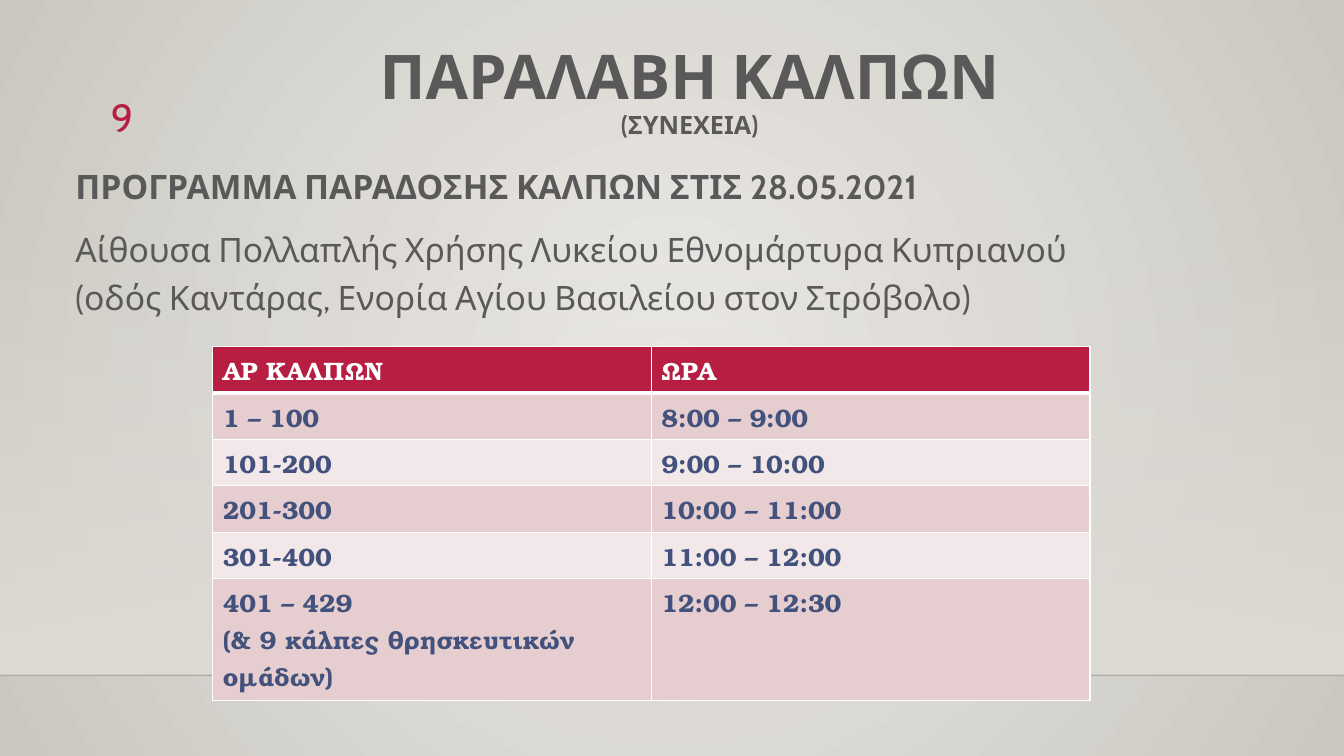
import pptx
import pptx.util
import pptx.dml.color
import pptx.enum.shapes
import pptx.enum.text
import pptx.oxml.ns
from lxml import etree

PX = 9144
RGB = pptx.dml.color.RGBColor
ALIGN = pptx.enum.text.PP_ALIGN
ANCHOR = pptx.enum.text.MSO_ANCHOR
GREY = RGB(0x59, 0x59, 0x59)
RED = RGB(0xB7, 0x1E, 0x42)
NAVY = RGB(0x42, 0x52, 0x7C)
WHITE = RGB(0xFF, 0xFF, 0xFF)
ROSE = RGB(0xE6, 0xCD, 0xCF)
PALE = RGB(0xF3, 0xE8, 0xE9)
WALL_LIGHT = RGB(0xEC, 0xEA, 0xE7)
WALL_DARK = RGB(0xCA, 0xC7, 0xC1)
FLOOR = RGB(0xDF, 0xDB, 0xD5)
BLACK = RGB(0x00, 0x00, 0x01)
FONT = "Cabin"
TABLE_FONT = "TeX Gyre Bonum"

SCHEDULE = [
    (["ΑΡ ΚΑΛΠΩΝ"], ["ΩΡΑ"]),
    (["1 – 100"], ["8:00 – 9:00"]),
    (["101-200"], ["9:00 – 10:00"]),
    (["201-300"], ["10:00 – 11:00"]),
    (["301-400"], ["11:00 – 12:00"]),
    (["401 – 429", "(& 9 κάλπες θρησκευτικών ομάδων)"], ["12:00 – 12:30"]),
]


def px(*values):
    return [pptx.util.Emu(v * PX) for v in values]


def sub(parent, tag, **attrs):
    return etree.SubElement(parent, pptx.oxml.ns.qn(tag), attrs)


def find(parent, tag):
    return next(parent.iter(pptx.oxml.ns.qn(tag)))


def add_run(p, text, size, color, bold=False, font=FONT):
    r = p.add_run()
    r.text = text
    r.font.size = pptx.util.Pt(size)
    r.font.name = font
    r.font.bold = bold
    r.font.color.rgb = color


def set_gradient(fill, colors):
    fill.gradient()
    for stop, color in zip(fill.gradient_stops, colors):
        stop.color.rgb = color


def add_backdrop(slide, width, height, top, floor):
    fill = slide.background.fill
    set_gradient(fill, (WALL_LIGHT, WALL_DARK))
    grad = find(slide.element, "a:gradFill")
    grad.remove(find(grad, "a:lin"))
    circle = sub(grad, "a:path", path="circle")
    sub(circle, "a:fillToRect", l="50000", t="50000", r="50000", b="50000")

    sp = slide.shapes.add_shape(
        pptx.enum.shapes.MSO_SHAPE.RECTANGLE, *px(0, top, width, floor - top))
    sp.shadow.inherit = False
    sp.line.fill.background()
    set_gradient(sp.fill, (FLOOR, FLOOR))
    sub(find(sp.element, "a:srgbClr"), "a:alpha", val="0")
    find(sp.element, "a:lin").set("ang", "5400000")

    line = slide.shapes.add_connector(
        pptx.enum.shapes.MSO_CONNECTOR.STRAIGHT, *px(0, floor, width, floor))
    line.line.color.rgb = BLACK
    line.line.width = pptx.util.Pt(1)
    sub(find(line.element, "a:srgbClr"), "a:alpha", val="20000")
    sub(find(line.element, "p:spPr"), "a:effectLst")


def add_title(slide, x, y, w, h):
    title = slide.shapes.title
    title.left, title.top, title.width, title.height = px(x, y, w, h)
    tf = title.text_frame
    tf.vertical_anchor = ANCHOR.MIDDLE
    p = tf.paragraphs[0]
    p.alignment = ALIGN.CENTER
    p.line_spacing = 0.9
    add_run(p, "ΠΑΡΑΛΑΒΗ ΚΑΛΠΩΝ", 44, GREY, True)
    p.add_line_break()
    add_run(p, "(ΣΥΝΕΧΕΙΑ)", 18, GREY, True)


def add_intro(slide, x, y, w, h):
    tf = slide.shapes.add_textbox(*px(x, y, w, h)).text_frame
    tf.word_wrap = True
    p = tf.paragraphs[0]
    p.line_spacing = 1.2
    add_run(p, "ΠΡΟΓΡΑΜΜΑ ΠΑΡΑΔΟΣΗΣ ΚΑΛΠΩΝ ΣΤΙΣ 28.05.2021", 24, GREY, True)
    p = tf.add_paragraph()
    p.line_spacing = 1.2
    p.space_before = pptx.util.Pt(10)
    add_run(p, "Αίθουσα Πολλαπλής Χρήσης Λυκείου Εθνομάρτυρα Κυπριανού", 24, GREY)
    p.add_line_break()
    add_run(p, "(οδός Καντάρας, Ενορία Αγίου Βασιλείου στον Στρόβολο)", 24, GREY)


def format_cell(cell, lines, fill, color, bottom):
    tf = cell.text_frame
    for i, text in enumerate(lines):
        p = tf.add_paragraph() if i else tf.paragraphs[0]
        add_run(p, text, 18, color, True, TABLE_FONT)
    tc_pr = cell._tc.get_or_add_tcPr()
    for side, width in (("L", 1), ("R", 1), ("T", 1), ("B", bottom)):
        ln = sub(tc_pr, "a:ln" + side, w=str(pptx.util.Pt(width)))
        sub(sub(ln, "a:solidFill"), "a:srgbClr", val=str(WHITE))
    cell.fill.solid()
    cell.fill.fore_color.rgb = fill


def add_schedule(slide, x, y, w, row_h, last_h):
    rows = len(SCHEDULE)
    height = row_h * (rows - 1) + last_h
    table = slide.shapes.add_table(rows, 2, *px(x, y, w, height)).table
    for i, row in enumerate(SCHEDULE):
        table.rows[i].height = px(last_h if i == rows - 1 else row_h)[0]
        fill = RED if i == 0 else ROSE if i % 2 else PALE
        for j, lines in enumerate(row):
            format_cell(table.cell(i, j), lines, fill,
                        NAVY if i else WHITE, 1 if i else 3)


def add_page_number(slide, x, y, w, h):
    tf = slide.shapes.add_textbox(*px(x, y, w, h)).text_frame
    tf.word_wrap = True
    p = tf.paragraphs[0]
    p.alignment = ALIGN.RIGHT
    add_run(p, "9", 28, RED)


def main():
    prs = pptx.Presentation()
    prs.slide_width, prs.slide_height = px(1333, 750)
    slide = prs.slides.add_slide(prs.slide_layouts[5])
    add_backdrop(slide, 1333, 750, 221, 670)
    add_intro(slide, 65, 152, 1200, 574)
    add_schedule(slide, 211, 344, 870, 46, 121)
    add_title(slide, 159, 35, 1050, 115)
    add_page_number(slide, 53, 88, 89, 55)
    prs.save("out.pptx")


if __name__ == "__main__":
    main()
